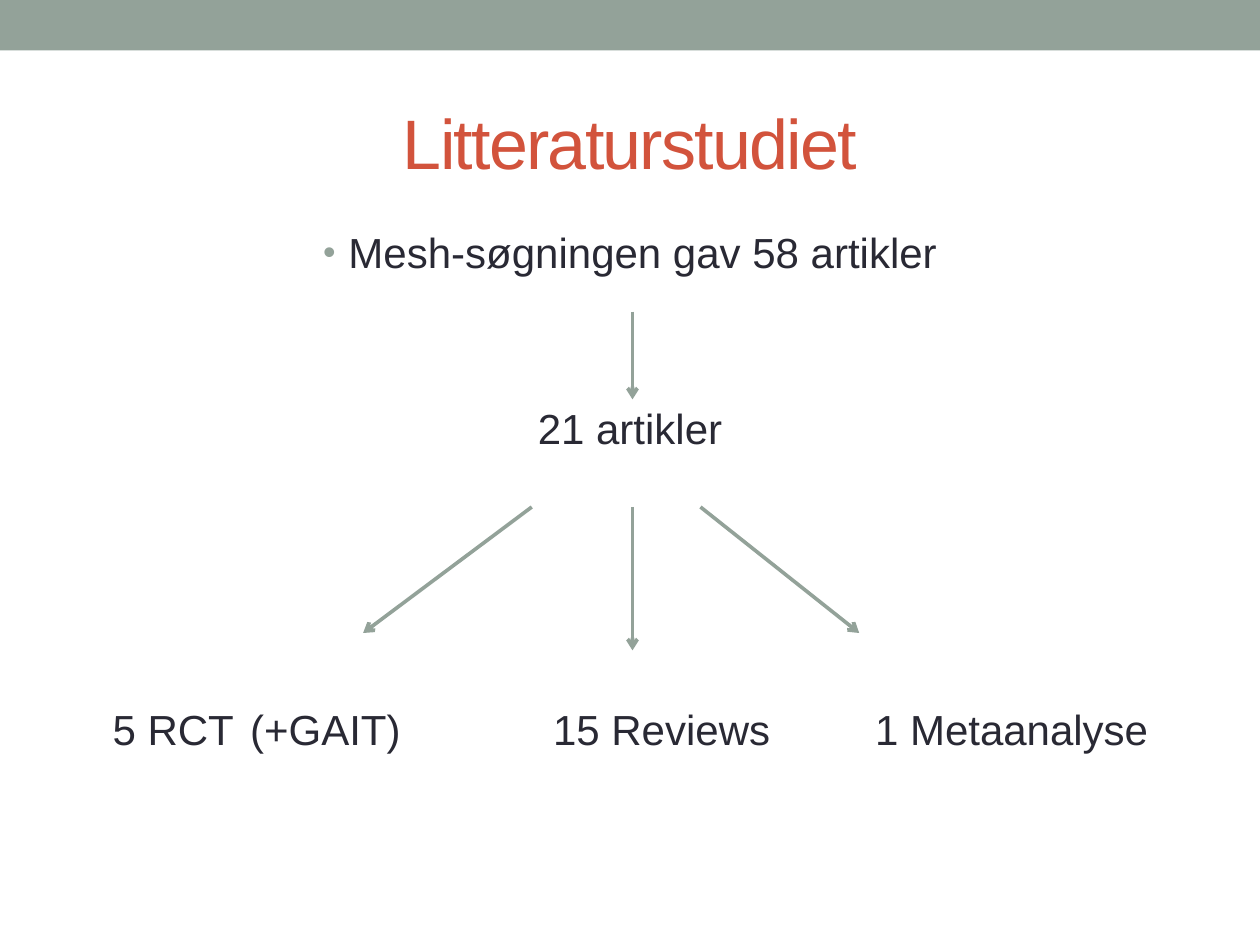
from lxml import etree
from pptx import Presentation
from pptx.dml.color import RGBColor
from pptx.enum.shapes import MSO_CONNECTOR, MSO_SHAPE
from pptx.enum.text import MSO_ANCHOR, MSO_AUTO_SIZE, PP_ALIGN
from pptx.oxml.ns import qn
from pptx.util import Cm, Pt

STRAIGHT = MSO_CONNECTOR.STRAIGHT
RECTANGLE = MSO_SHAPE.RECTANGLE
MIDDLE, TOP = MSO_ANCHOR.MIDDLE, MSO_ANCHOR.TOP
NO_AUTOFIT = MSO_AUTO_SIZE.NONE
CENTER, LEFT = PP_ALIGN.CENTER, PP_ALIGN.LEFT

FONT = "Arial"
GREEN, RED, DARK = "93A299", "D2533C", "292934"
PAGE_WIDTH, PAGE_HEIGHT = 25.4, 19.05
MIDDLE_X = 12.75
BRANCH_Y = 10.22  # where the three lower arrows start
RESULT_Y = 14.18

# Text, left edge and width of each result
RESULTS = [
    ("5 RCT\t (+GAIT)", 2.27, 7),
    ("15 Reviews", 11.15, 5),
    ("1 Metaanalyse", 17.64, 6.5),
]

# Start and end of each arrow
ARROWS = [
    ((MIDDLE_X, 6.28), (MIDDLE_X, 8.05)),
    ((10.72, BRANCH_Y), (7.32, 12.76)),
    ((MIDDLE_X, BRANCH_Y), (MIDDLE_X, 13.11)),
    ((14.12, BRANCH_Y), (17.32, 12.76)),
]


def color(hex_code):
    return RGBColor.from_string(hex_code)


def place(box, left, top, width, height):
    box.left, box.top = Cm(left), Cm(top)
    box.width, box.height = Cm(width), Cm(height)


def style_paragraph(para, size, hex_code, alignment):
    para.alignment = alignment
    para.font.name = FONT
    para.font.size = Pt(size)
    para.font.color.rgb = color(hex_code)


def add_band(page):
    band = page.shapes.add_shape(RECTANGLE, 0, 0, Cm(PAGE_WIDTH), Cm(1.02))
    band.shadow.inherit = False
    band.fill.solid()
    band.fill.fore_color.rgb = color(GREEN)
    band.line.fill.background()


def fill_title(page, text):
    title = page.shapes.title
    place(title, 1.27, 1.49, 22.86, 2.74)
    frame = title.text_frame
    frame.text = text
    frame.vertical_anchor = MIDDLE
    frame.auto_size = NO_AUTOFIT
    para = frame.paragraphs[0]
    style_paragraph(para, 40, RED, CENTER)
    para.runs[0].font._element.set("spc", "-100")


def set_bullet(para):
    """Give the paragraph a small green bullet with a hanging indent."""
    props = para._p.get_or_add_pPr()
    props.set("marL", str(Cm(0.51)))
    props.set("indent", str(-Cm(0.51)))
    bullet_color = etree.SubElement(props, qn("a:buClr"))
    etree.SubElement(bullet_color, qn("a:srgbClr"), val=GREEN)
    etree.SubElement(props, qn("a:buSzPct"), val="85000")
    etree.SubElement(props, qn("a:buFont"), typeface=FONT)
    etree.SubElement(props, qn("a:buChar"), char="•")
    # Run defaults come after bullets in the schema
    props.append(props.find(qn("a:defRPr")))


def set_plain(para):
    """Remove bullet and indent."""
    props = para._p.get_or_add_pPr()
    props.set("marL", "0")
    props.set("indent", "0")
    etree.SubElement(props, qn("a:buNone"))
    props.append(props.find(qn("a:defRPr")))


def fill_body(page, found, selected):
    body = page.placeholders[1]
    place(body, 1.27, 4.44, 22.86, 13.54)
    frame = body.text_frame
    frame.vertical_anchor = TOP
    frame.auto_size = NO_AUTOFIT
    frame.text = f"{found}\n{selected}"
    first, second = frame.paragraphs
    for para, space in ((first, 0), (second, 72)):
        style_paragraph(para, 24, DARK, CENTER)
        para.space_before = Pt(space)
    set_bullet(first)
    set_plain(second)


def add_result(page, text, left, width):
    box = page.shapes.add_textbox(Cm(left), Cm(RESULT_Y), Cm(width), Cm(1))
    frame = box.text_frame
    frame.word_wrap = True
    frame.margin_left = frame.margin_right = 0
    frame.margin_top = frame.margin_bottom = 0
    frame.text = text
    style_paragraph(frame.paragraphs[0], 24, DARK, LEFT)


def add_arrow(page, start, end):
    points = [Cm(value) for value in (*start, *end)]
    arrow = page.shapes.add_connector(STRAIGHT, *points)
    arrow.line.color.rgb = color(GREEN)
    arrow.line.width = Pt(2.08)
    etree.SubElement(arrow.line._get_or_add_ln(), qn("a:tailEnd"), type="arrow")
    etree.SubElement(arrow._element.spPr, qn("a:effectLst"))


def main():
    deck = Presentation()
    deck.slide_width, deck.slide_height = Cm(PAGE_WIDTH), Cm(PAGE_HEIGHT)
    page = deck.slides.add_slide(deck.slide_layouts[1])
    add_band(page)
    fill_title(page, "Litteraturstudiet")
    fill_body(page, "Mesh-søgningen gav 58 artikler", "21 artikler")
    for text, left, width in RESULTS:
        add_result(page, text, left, width)
    for start, end in ARROWS:
        add_arrow(page, start, end)
    deck.save("out.pptx")


if __name__ == "__main__":
    main()
